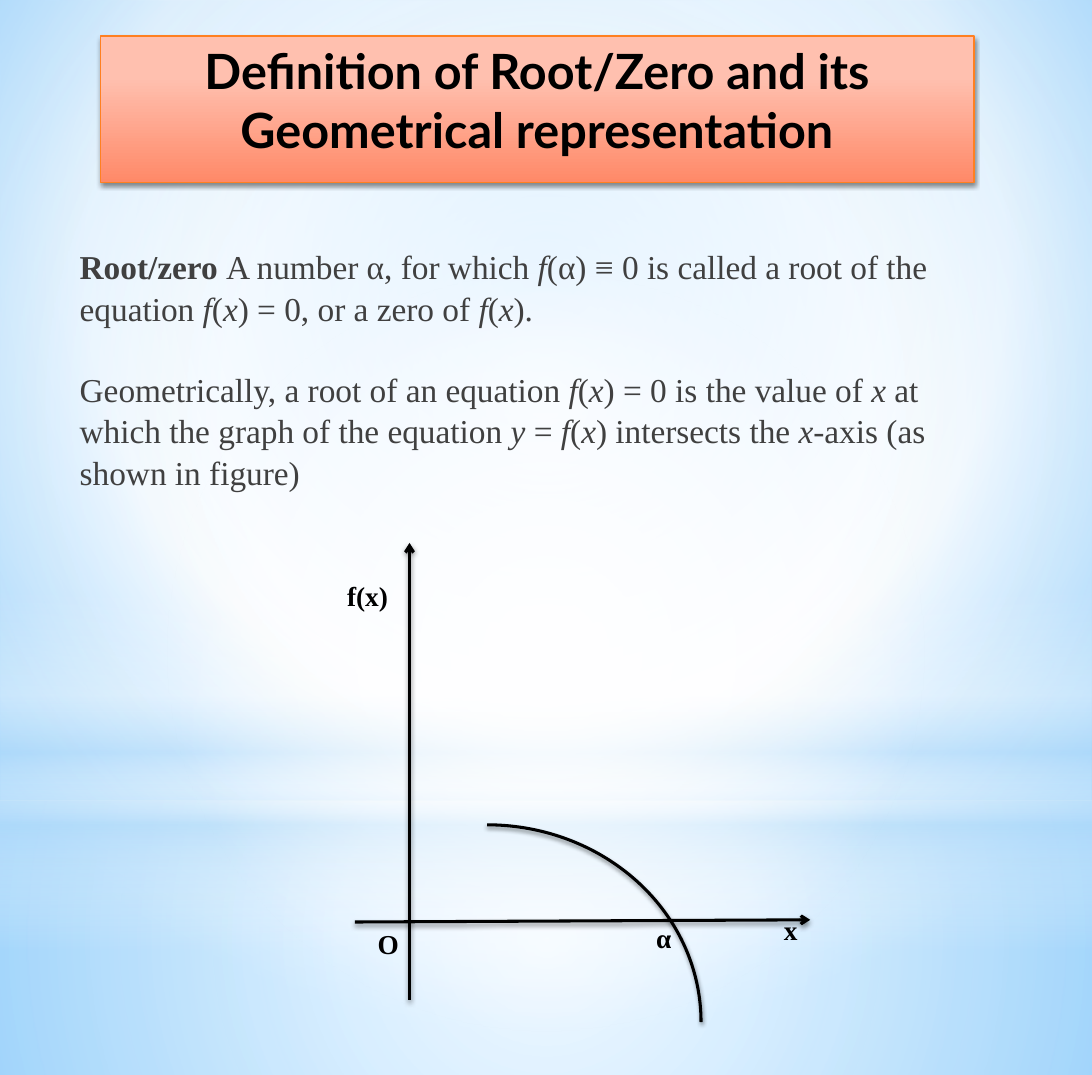
from dataclasses import dataclass

from lxml import etree
from pptx import Presentation
from pptx.dml.color import RGBColor
from pptx.enum.shapes import MSO_CONNECTOR as Connector, MSO_SHAPE as Shape
from pptx.enum.text import MSO_ANCHOR as Anchor, MSO_AUTO_SIZE as AutoSize, PP_ALIGN as Align
from pptx.oxml.ns import qn
from pptx.util import Inches, Pt


@dataclass(frozen=True)
class Theme:
    ink: str = "000000"
    body_ink: str = "404040"
    title_line: str = "FF8021"
    white: str = "FFFFFF"
    sky: str = "B4DCFA"
    title_font: str = "Lato"
    body_font: str = "Times New Roman"
    title_size: int = 32
    body_size: int = 22
    label_size: int = 18
    stroke: float = 2
    backdrop: tuple = ((0, "9ED5FF", 100), (60, "FFFFFF", 100), (100, "5BB9FF", 100))
    banner: tuple = ((28, "FFC0AF", 100), (100, "FF8968", 100))


THEME = Theme()
CENTER = (50, 50, 50, 50)


def add_color(parent, color, alpha):
    node = etree.SubElement(parent, qn("a:srgbClr"), val=color)
    if alpha < 100:
        etree.SubElement(node, qn("a:alpha"), val=str(alpha * 1000))


def set_gradient(fill, owner, stops, focus=None):
    fill.solid()
    solid = owner.find(qn("a:solidFill"))
    gradient = etree.Element(qn("a:gradFill"), rotWithShape="1")
    stop_list = etree.SubElement(gradient, qn("a:gsLst"))
    for position, color, alpha in stops:
        stop = etree.SubElement(stop_list, qn("a:gs"), pos=str(position * 1000))
        add_color(stop, color, alpha)
    if focus:
        circle = etree.SubElement(gradient, qn("a:path"))
        circle.set("path", "circle")
        sides = {side: str(value * 1000) for side, value in zip("ltrb", focus)}
        etree.SubElement(circle, qn("a:fillToRect"), **sides)
    else:
        etree.SubElement(gradient, qn("a:lin"), ang="5400000", scaled="0")
    owner.replace(solid, gradient)


def add_shadow(shape):
    effects = etree.SubElement(shape.element.spPr, qn("a:effectLst"))
    shadow = etree.SubElement(
        effects, qn("a:outerShdw"), blurRad=str(Pt(3.1)), dist=str(Pt(1.8)),
        dir="5400000", rotWithShape="0")
    add_color(shadow, THEME.ink, 45)


def set_line(shape, color, width):
    shape.line.color.rgb = RGBColor.from_string(color)
    shape.line.width = Pt(width)


def add_glow(page, kind, area, stops, focus=None):
    glow = page.shapes.add_shape(kind, *map(Inches, area))
    set_gradient(glow.fill, glow.element.spPr, stops, focus)
    glow.line.fill.background()
    glow.shadow.inherit = False


def add_span(para, text, font, size, color, bold=False, italic=False):
    span = para.add_run()
    span.text = text
    span.font.name = font
    span.font.size = Pt(size)
    span.font.bold = bold
    span.font.italic = italic
    span.font.color.rgb = RGBColor.from_string(color)


def add_backdrop(page):
    white, sky = THEME.white, THEME.sky
    fill = page.background.fill
    fill.solid()
    owner = page.element.find(".//" + qn("p:bgPr"))
    set_gradient(fill, owner, THEME.backdrop, (20, 10, 20, 60))
    add_glow(page, Shape.RECTANGLE, (0, 7.33, 10, 2.52),
             ((0, white, 91), (37, white, 76), (100, sky, 79)), CENTER)
    add_glow(page, Shape.RECTANGLE, (0, 0, 10, 7.33),
             ((0, white, 89), (48, white, 62), (100, sky, 79)), CENTER)
    add_glow(page, Shape.RECTANGLE, (0, 5.41, 10, 3.28),
             ((0, white, 0), (29, white, 30), (45, sky, 40),
              (55, white, 26), (65, sky, 60), (100, white, 0)))
    add_glow(page, Shape.OVAL, (0, 2.3, 10, 7.33),
             ((0, white, 100), (56, white, 0)), CENTER)


def add_title(page, text):
    box = page.shapes.add_shape(Shape.RECTANGLE, *map(Inches, (0.92, 0.33, 8, 1.34)))
    set_gradient(box.fill, box.element.spPr, THEME.banner)
    set_line(box, THEME.title_line, 0.75)
    add_shadow(box)
    box.text_frame.word_wrap = True
    box.text_frame.vertical_anchor = Anchor.TOP
    para = box.text_frame.paragraphs[0]
    para.alignment = Align.CENTER
    add_span(para, text, THEME.title_font, THEME.title_size, THEME.ink, bold=True)


def add_body(page, paragraphs):
    box = page.shapes.add_textbox(*map(Inches, (0.58, 2.19, 8.75, 2.48)))
    frame = box.text_frame
    frame.word_wrap = True
    frame.margin_left = Inches(0.15)
    for index, (lead, marked) in enumerate(paragraphs):
        para = frame.add_paragraph() if index else frame.paragraphs[0]
        para.line_spacing = 1.04
        para.space_after = Pt(26)
        style = (THEME.body_font, THEME.body_size, THEME.body_ink)
        if lead:
            add_span(para, lead, *style, bold=True)
        for part, text in enumerate(marked.split("_")):
            add_span(para, text, *style, italic=part % 2 == 1)


def add_curve(page, area):
    curve = page.shapes.add_shape(Shape.ARC, *map(Inches, area))
    curve.fill.background()
    set_line(curve, THEME.ink, THEME.stroke)
    add_shadow(curve)


def add_axis(page, start, end):
    axis = page.shapes.add_connector(Connector.STRAIGHT, *map(Inches, start + end))
    set_line(axis, THEME.ink, THEME.stroke)
    etree.SubElement(axis.element.spPr.find(qn("a:ln")), qn("a:tailEnd"), type="arrow")
    add_shadow(axis)


def add_label(page, text, left, top, width):
    box = page.shapes.add_textbox(*map(Inches, (left, top, width, 0.4)))
    box.text_frame.word_wrap = True
    box.text_frame.auto_size = AutoSize.SHAPE_TO_FIT_TEXT
    add_span(box.text_frame.paragraphs[0], text, THEME.body_font,
             THEME.label_size, THEME.ink, bold=True)


def main():
    deck = Presentation()
    deck.slide_width, deck.slide_height = Inches(10), Inches(9.84)
    page = deck.slides.add_slide(deck.slide_layouts[6])
    add_backdrop(page)
    add_title(page, "Definition of Root/Zero and its Geometrical representation")
    add_body(page, (
        ("Root/zero ", "A number α, for which _f_(α) ≡ 0 is called a root of the "
                       "equation _f_(_x_) = 0, or a zero of _f_(_x_)."),
        ("", "Geometrically, a root of an equation _f_(_x_) = 0 is the value of _x _at "
             "which the graph of the equation _y _= _f_(_x_) intersects the _x_-axis "
             "(as shown in figure)"),
    ))
    add_curve(page, (2.5, 7.55, 3.92, 3.61))
    add_axis(page, (3.75, 9.15), (3.75, 4.97))
    add_axis(page, (3.25, 8.44), (7.42, 8.42))
    for label in (("f(x)", 3.08, 5.25, 0.98), ("x", 7.08, 8.31, 0.58),
                  ("α", 5.91, 8.38, 0.42), ("O", 3.36, 8.44, 0.42)):
        add_label(page, *label)
    deck.save("out.pptx")


if __name__ == "__main__":
    main()
